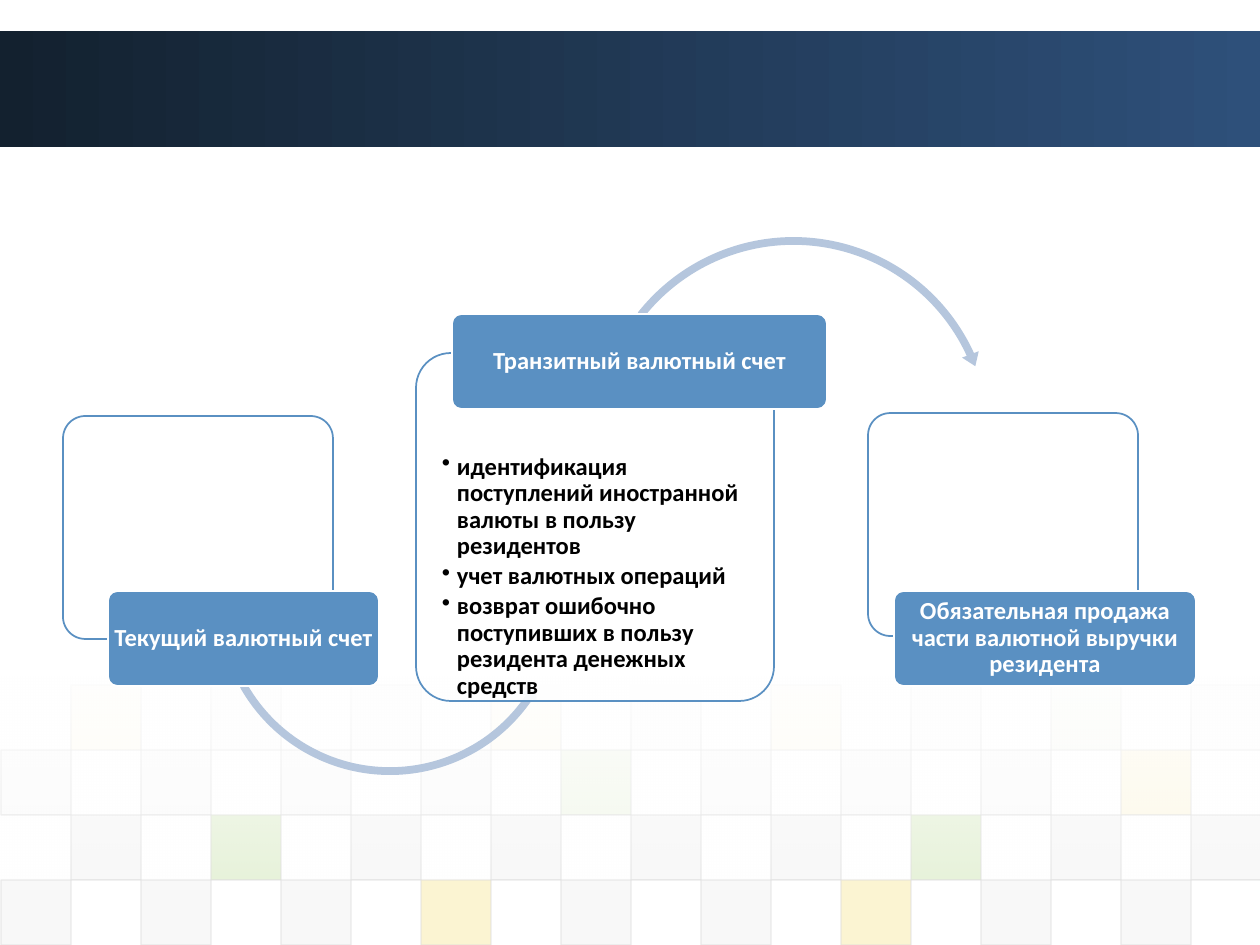
from dataclasses import dataclass

from lxml.etree import SubElement
from pptx import Presentation
from pptx.dml.color import RGBColor
from pptx.enum.shapes import MSO_SHAPE as Preset
from pptx.enum.text import MSO_ANCHOR as Anchor, PP_ALIGN as Align
from pptx.oxml.ns import qn
from pptx.util import Emu, Pt

PX_PER_INCH = 126
EMU_PER_INCH = 914400


@dataclass(frozen=True)
class Theme:
    font: str = "Calibri"
    text_size: float = 14
    hairline: float = 0.75
    outline: float = 1
    white: str = "FFFFFF"
    black: str = "000000"
    blue: str = "5A90C2"
    arrow: str = "B5C6DD"
    band_start: str = "13212F"
    band_end: str = "2E507A"
    gray: str = "DDDDDD"
    pale: str = "EAEAEA"
    green: str = "8AC246"
    yellow: str = "EFC821"


def px(length):
    return Emu(round(length * EMU_PER_INCH / PX_PER_INCH))


def rgb(color):
    return RGBColor.from_string(color)


def write(frame, lines, theme, color, align=Align.LEFT, space_after=0, bullet_indent=0):
    for index, line in enumerate(lines):
        paragraph = frame.paragraphs[0] if index == 0 else frame.add_paragraph()
        if bullet_indent:
            properties = paragraph._p.get_or_add_pPr()
            properties.set("marL", str(px(bullet_indent)))
            properties.set("indent", str(-px(bullet_indent)))
            SubElement(properties, qn("a:buChar"), char="•")
        paragraph.alignment = align
        paragraph.line_spacing = 0.9
        paragraph.space_after = Pt(space_after)
        run = paragraph.add_run()
        run.text = line
        run.font.name = theme.font
        run.font.size = Pt(theme.text_size)
        run.font.bold = True
        run.font.color.rgb = rgb(color)


class SlideBuilder:
    """Draw the elements of one slide in a single style."""

    def __init__(self, slide, theme):
        self.slide = slide
        self.theme = theme

    def shape(self, preset, box, fill, line=None, width=1, adjustments=(), alphas=(), angle=0):
        shape = self.slide.shapes.add_shape(preset, *map(px, box))
        shape.shadow.inherit = False
        for index, value in enumerate(adjustments):
            shape.adjustments[index] = value
        if isinstance(fill, tuple):
            shape.fill.gradient()
            shape.fill.gradient_angle = angle
            for stop, color in zip(shape.fill.gradient_stops, fill):
                stop.color.rgb = rgb(color)
        else:
            shape.fill.solid()
            shape.fill.fore_color.rgb = rgb(fill)
        if line:
            shape.line.color.rgb = rgb(line)
            shape.line.width = Pt(width)
        else:
            shape.line.fill.background()
        colors = list(shape.element.spPr.iter(qn("a:srgbClr")))
        for color, alpha in zip(colors, alphas):
            SubElement(color, qn("a:alpha"), val=str(alpha * 1000))
        return shape

    def text(self, box, lines, color, inset, anchor=Anchor.TOP, **style):
        frame = self.slide.shapes.add_textbox(*map(px, box)).text_frame
        frame.word_wrap = True
        frame.vertical_anchor = anchor
        frame.margin_left = frame.margin_right = px(inset)
        frame.margin_top = frame.margin_bottom = px(inset)
        write(frame, lines, self.theme, color, **style)

    def mosaic(self, top, rows, step_x, step_y):
        theme = self.theme
        colors = {"D": theme.gray, "E": theme.pale, "G": theme.green, "Y": theme.yellow}
        for row, (first, alpha, cells) in enumerate(rows):
            for index, key in enumerate(cells):
                left = (first + 2 * index) * step_x + 1
                self.shape(Preset.RECTANGLE, (left, top + row * step_y, step_x, step_y),
                           colors[key], theme.gray, theme.hairline, alphas=(alpha, 60))

    def card(self, box):
        self.shape(Preset.ROUNDED_RECTANGLE, box, self.theme.white, self.theme.blue,
                   self.theme.outline, adjustments=(0.1,), alphas=(90,))

    def label(self, box, caption):
        self.shape(Preset.ROUNDED_RECTANGLE, box, self.theme.blue, self.theme.white,
                   self.theme.outline, adjustments=(0.1,))
        left, top, width, height = box
        self.text((left + 3, top + 3, width - 6, height - 6), [caption], self.theme.white,
                  inset=3, anchor=Anchor.MIDDLE, align=Align.CENTER)

    def arrow(self, preset, box, adjustments):
        self.shape(preset, box, self.theme.arrow, adjustments=adjustments)


def main():
    presentation = Presentation()
    presentation.slide_width = px(1260)
    presentation.slide_height = px(945)
    slide = presentation.slides.add_slide(presentation.slide_layouts[6])
    theme = Theme()
    builder = SlideBuilder(slide, theme)

    builder.shape(Preset.RECTANGLE, (0, 31, 1260, 116), (theme.band_start, theme.band_end))
    mosaic_rows = [
        (1, 5, "YEEYDYEGE"),
        (0, 10, "DDDDGDDDY"),
        (1, 20, "DGDDDDGDD"),
        (0, 20, "DDDYDDYDD"),
    ]
    builder.mosaic(685, mosaic_rows, step_x=70, step_y=65)
    builder.shape(Preset.RECTANGLE, (0, 677, 1260, 204), (theme.white, theme.white),
                  alphas=(90, 0), angle=270)

    builder.card((63, 416, 270, 223))
    builder.arrow(Preset.LEFT_CIRCULAR_ARROW, (213, 426, 354, 354),
                  (0.022, 2.613, 20.472, 90.349, 0.025))
    builder.label((108, 591, 271, 95), "Текущий валютный счет")

    builder.card((416, 353, 358, 348))
    duties = [
        "идентификация поступлений иностранной валюты в пользу резидентов",
        "учет валютных операций",
        "возврат ошибочно поступивших в пользу резидента денежных средств",
    ]
    builder.text((424, 436, 343, 257), duties, theme.black, inset=18,
                 space_after=2.1, bullet_indent=15)
    builder.arrow(Preset.CIRCULAR_ARROW, (590, 232, 407, 407),
                  (0.019, 2.258, 201.224, 130.993, 0.022))
    builder.label((452, 314, 375, 95), "Транзитный валютный счет")

    builder.card((868, 413, 270, 223))
    builder.label((894, 591, 302, 95), "Обязательная продажа части валютной выручки резидента")

    presentation.save("out.pptx")


if __name__ == "__main__":
    main()
